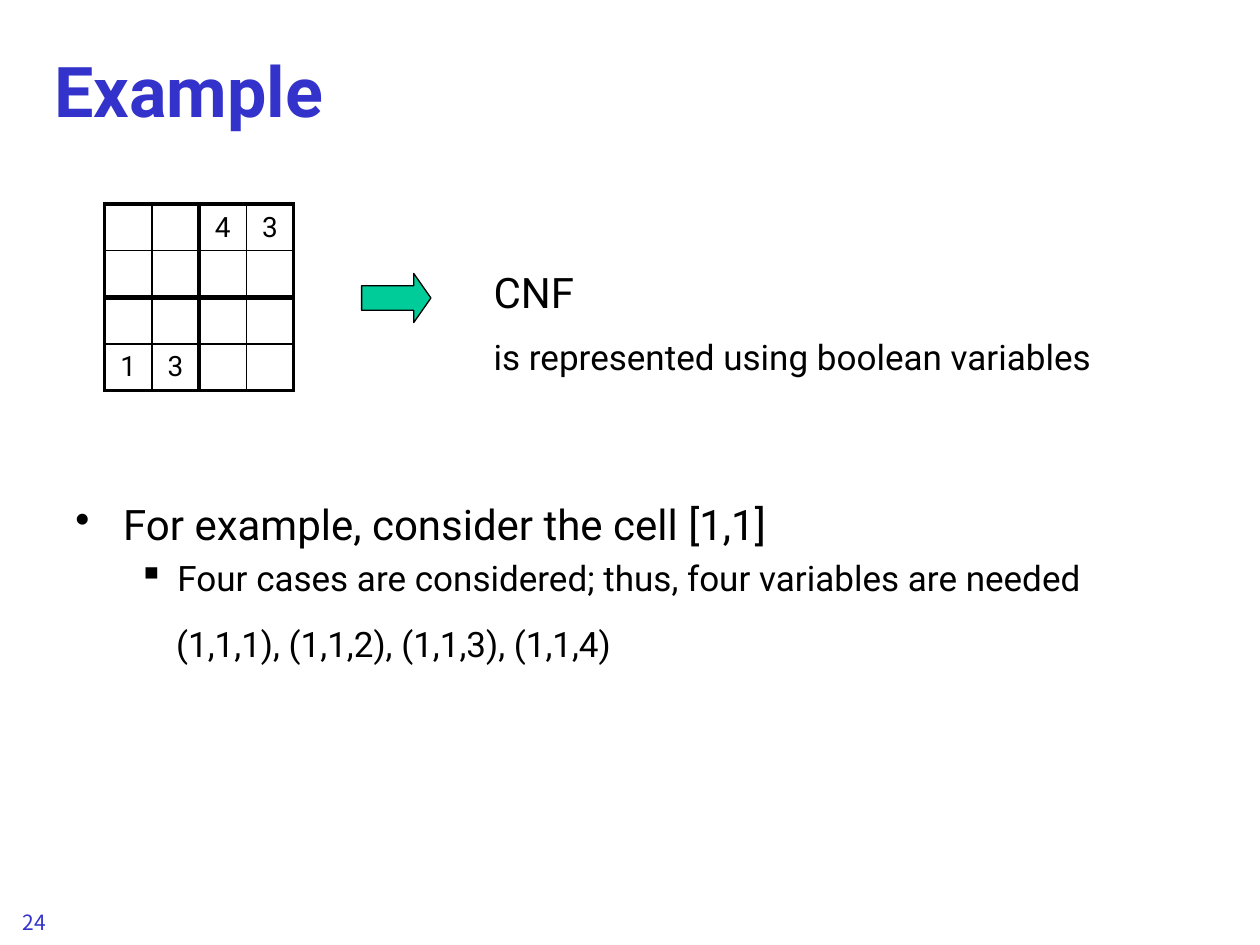
from dataclasses import dataclass

import pptx
import pptx.dml.color
import pptx.enum.shapes
import pptx.enum.text
import pptx.oxml
import pptx.oxml.ns
import pptx.util

SLIDE_W, SLIDE_H = 10, 7.5


@dataclass(frozen=True)
class Theme:
    font: str = "Roboto"
    number_font: str = "Noto Sans CJK KR"
    accent: str = "3333CC"
    ink: str = "000000"
    paper: str = "FFFFFF"
    arrow: str = "00CC99"
    title: int = 40
    heading: int = 24
    body: int = 20
    cell: int = 16
    number: int = 12
    thin: float = 1
    outer: float = 2.25
    thick: float = 3


T = Theme()


def rgb(value):
    return pptx.dml.color.RGBColor.from_string(value)


def inches(box):
    return [pptx.util.Inches(v) for v in box]


def add_run(p, text, size, color=T.ink, font=T.font, bold=False):
    r = p.add_run()
    r.text = text
    r.font.size = pptx.util.Pt(size)
    r.font.name = font
    r.font.bold = bold
    r.font.color.rgb = rgb(color)
    for tag in ("a:ea", "a:cs"):
        face = pptx.oxml.parse_xml(
            f'<{tag} {pptx.oxml.ns.nsdecls("a")} typeface="{font}"/>')
        r.font._element.append(face)


def text_box(s, box, text, size, **style):
    tf = s.shapes.add_textbox(*inches(box)).text_frame
    tf.word_wrap = True
    add_run(tf.paragraphs[0], text, size, **style)


def title(s, box, text):
    sp = s.shapes.title
    sp.left, sp.top, sp.width, sp.height = inches(box)
    tf = sp.text_frame
    tf.vertical_anchor = pptx.enum.text.MSO_ANCHOR.MIDDLE
    p = tf.paragraphs[0]
    p.alignment = pptx.enum.text.PP_ALIGN.LEFT
    add_run(p, text, T.title, color=T.accent, bold=True)


def set_borders(cell, widths):
    """Draw left, right, top and bottom borders, in that order."""
    tcPr = cell._tc.get_or_add_tcPr()
    for i, (side, width) in enumerate(zip("LRTB", widths)):
        tcPr.insert(i, pptx.oxml.parse_xml(
            f'<a:ln{side} {pptx.oxml.ns.nsdecls("a")} w="{pptx.util.Pt(width)}">'
            f'<a:solidFill><a:srgbClr val="{T.ink}"/></a:solidFill></a:ln{side}>'))


def sudoku(s, box, clues, n=4):
    """A square puzzle; clues maps (row, column) to a digit."""
    table = s.shapes.add_table(n, n, *inches(box)).table
    table.first_row = table.horz_banding = False
    # Outer edge, block edge and plain lines by position
    edges = [T.outer if i in (0, n) else T.thick if i == n // 2 else T.thin
             for i in range(n + 1)]
    for i in range(n):
        table.columns[i].width = pptx.util.Inches(box[2] / n)
        table.rows[i].height = pptx.util.Inches(box[3] / n)
    for row in range(n):
        for col in range(n):
            cell = table.cell(row, col)
            cell.fill.solid()
            cell.fill.fore_color.rgb = rgb(T.paper)
            cell.margin_top = cell.margin_bottom = pptx.util.Inches(0.03)
            cell.vertical_anchor = pptx.enum.text.MSO_ANCHOR.MIDDLE
            p = cell.text_frame.paragraphs[0]
            p.alignment = pptx.enum.text.PP_ALIGN.CENTER
            if (row, col) in clues:
                add_run(p, clues[row, col], T.cell)
            else:
                p._p.get_or_add_endParaRPr().set("sz", str(T.cell * 100))
            set_borders(cell, (edges[col], edges[col + 1],
                               edges[row], edges[row + 1]))


def arrow(s, box):
    sp = s.shapes.add_shape(
        pptx.enum.shapes.MSO_SHAPE.RIGHT_ARROW, *inches(box))
    sp.shadow.inherit = False
    sp.adjustments[0], sp.adjustments[1] = 0.5, 0.35
    sp.fill.solid()
    sp.fill.fore_color.rgb = rgb(T.arrow)
    sp.line.color.rgb = rgb(T.ink)
    sp.line.width = pptx.util.Pt(0.75)


def bullets(s, box, items):
    """Each item is text, size, level, bullet, left margin, hanging indent."""
    tf = s.shapes.add_textbox(*inches(box)).text_frame
    tf.word_wrap = True
    for i, (text, size, level, mark, margin, hang) in enumerate(items):
        p = tf.add_paragraph() if i else tf.paragraphs[0]
        p.level = level
        p.space_before = pptx.util.Pt(0.2 * size)
        pPr = p._p.get_or_add_pPr()
        pPr.set("marL", str(pptx.util.Inches(margin)))
        pPr.set("indent", str(-pptx.util.Inches(hang)))
        pPr.append(pptx.oxml.parse_xml(
            f'<a:buChar {pptx.oxml.ns.nsdecls("a")} char="{mark}"/>'))
        add_run(p, text, size)


def encoding(s, x, y, w):
    """Heading and explanation beside the puzzle."""
    text_box(s, (x, y, w, 0.5), "CNF", T.heading)
    text_box(s, (x, y + 0.54, w, 0.43),
             "is represented using boolean variables", T.body)


def main():
    prs = pptx.Presentation()
    prs.slide_width, prs.slide_height = inches((SLIDE_W, SLIDE_H))
    s = prs.slides.add_slide(prs.slide_layouts[5])

    # Title and page number
    title(s, (0.33, 0.17, 9.5, 1.08), "Example")
    text_box(s, (0.08, 7.17, 2.08, 0.33), "24", T.number,
             color=T.accent, font=T.number_font)

    # Puzzle turned into a formula
    sudoku(s, (0.83, 1.62, 1.5, 1.48),
           {(0, 2): "4", (0, 3): "3", (3, 0): "1", (3, 1): "3"})
    arrow(s, (2.87, 2.17, 0.55, 0.39))
    encoding(s, 3.82, 2.07, 4.96)

    # Worked case with its variables
    bullets(s, (0.5, 3.91, 9.5, 1.62), [
        ("For example, consider the cell [1,1]",
         T.heading, 0, "•", 0.38, 0.38),
        ("Four cases are considered; thus, four variables are needed",
         T.body, 1, "▪", 0.81, 0.31),
    ])
    text_box(s, (1.3, 4.89, 4.17, 0.43),
             "(1,1,1), (1,1,2), (1,1,3), (1,1,4)", T.body)

    prs.save("out.pptx")


if __name__ == "__main__":
    main()
